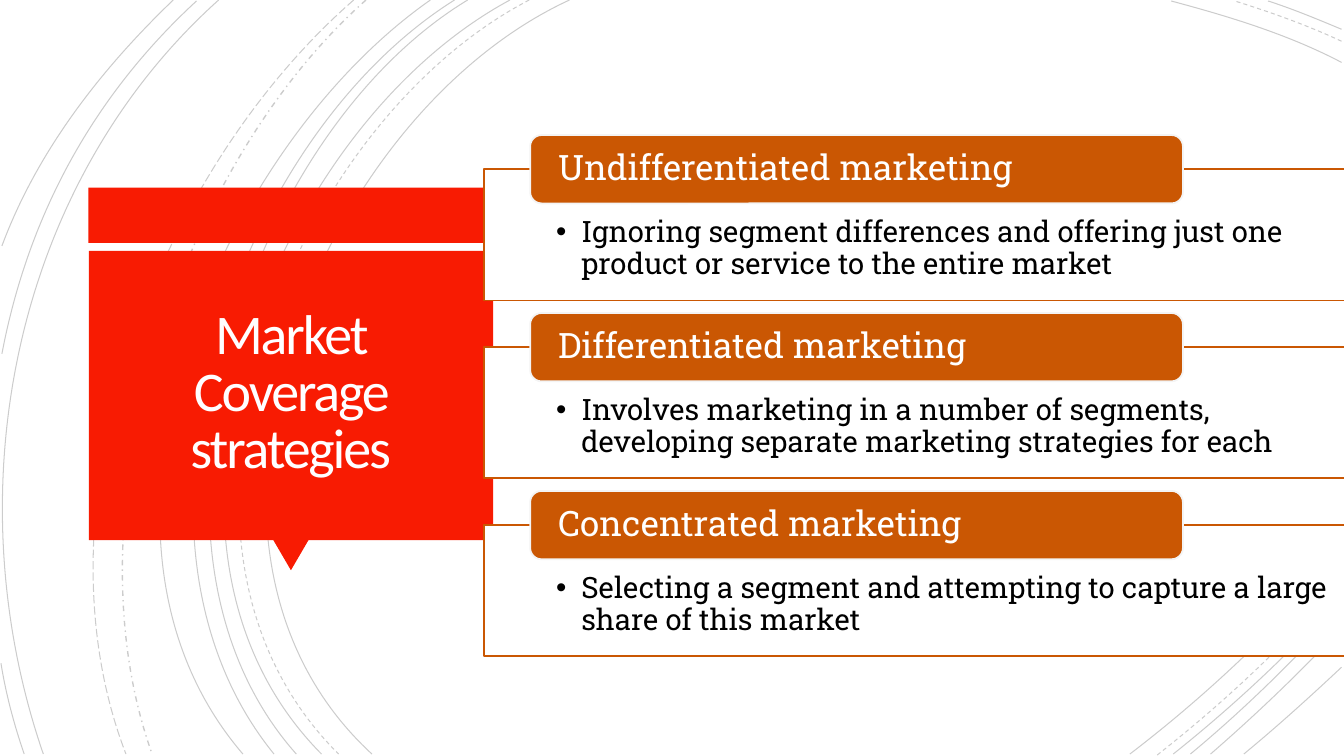
from dataclasses import dataclass
from typing import Any

from pptx import Presentation
from pptx.dml.color import RGBColor
from pptx.enum.dml import MSO_LINE
from pptx.enum.shapes import MSO_SHAPE
from pptx.enum.text import MSO_ANCHOR, MSO_AUTO_SIZE, PP_ALIGN
from pptx.oxml.ns import qn
from pptx.util import Pt

RED = "F81B02"
ORANGE = "CA5703"
FRAME_TOP = 120.9
PILL_TOP = 96.5
STRATEGY_PITCH = 127.1


@dataclass(frozen=True)
class Arc:
    points: tuple[float, ...]
    dash: Any = MSO_LINE.SOLID
    width: float = 0.75


@dataclass(frozen=True)
class Strategy:
    heading: str
    description: str


@dataclass(frozen=True)
class Block:
    preset: Any
    bounds: tuple[float, float, float, float]
    rotation: float = 0


@dataclass(frozen=True)
class TextStyle:
    font: str
    size: float
    color: str
    margins: tuple[float, float, float, float]
    anchor: Any
    align: Any
    spacing: float


ARCS = [
    Arc((406.8, 0, 226.8, 82.8, 103, 388.8, 265.7, 538.6)),
    Arc((958.3, 44.6, 920.2, 24.5, 877, 11.5, 836.6, 0.7)),
    Arc((807.1, 538.6, 861.8, 496.8, 913.7, 447.8, 958.3, 394.6)),
    Arc((378, 0, 205.2, 90, 88.6, 386.6, 241.9, 538.6), MSO_LINE.DASH),
    Arc((958.3, 29.5, 933.8, 18, 907.2, 8.6, 882, 0.7), MSO_LINE.DASH),
    Arc((826.6, 539.3, 873.4, 502.6, 918, 460.8, 957.6, 415.4), MSO_LINE.DASH),
    Arc((364.3, 0, 194.4, 91.4, 79.2, 386.6, 229.7, 538.6)),
    Arc((958.3, 20.9, 941, 13.7, 923.8, 6.5, 905.8, 0.7)),
    Arc((838.1, 538.6, 880.6, 504.7, 921.6, 466.6, 958.3, 425.5)),
    Arc((334.1, 0, 175.7, 95.8, 79.2, 389.5, 211.7, 538.6)),
    Arc((850.3, 538.6, 888.5, 506.9, 924.5, 471.6, 958.3, 434.2)),
    Arc((324.7, 0, 166.3, 99.4, 69.8, 383.8, 195.8, 538.6)),
    Arc((864.7, 538.6, 897.1, 510.5, 928.8, 480.2, 958.3, 448.6)),
    Arc((307.4, 0, 156.2, 105.8, 38.2, 380.9, 173.5, 538.6)),
    Arc((888.5, 538.6, 912.2, 519.1, 935.3, 498.2, 958.3, 476.6)),
    Arc((261.4, 0, 126.7, 119.5, 46.8, 366.5, 108.7, 538.6), MSO_LINE.DASH_DOT, 1),
    Arc((252.7, 0, 113, 121.7, 20.9, 359.3, 90, 538.6), MSO_LINE.LONG_DASH),
    Arc((156.2, 0, 7.9, 133.2, -33.1, 352.8, 31, 538.6)),
    Arc((140.4, 0.7, 66.2, 69.1, 20.2, 154.1, 1.4, 252.7)),
    Arc((0.7, 473.8, 4.3, 496.1, 10.1, 517.7, 17.3, 538.6)),
    Arc((123.8, 0, 72, 49.7, 26.6, 108, 1.4, 175.7)),
]
TITLE_BLOCKS = [
    Block(MSO_SHAPE.RECTANGLE, (63.2, 134, 289.4, 39.6)),
    Block(MSO_SHAPE.ISOSCELES_TRIANGLE, (195.2, 385.7, 25.2, 21.6), 180),
    Block(MSO_SHAPE.RECTANGLE, (63.5, 179.3, 288.7, 206.6)),
]
STRATEGIES = [
    Strategy("Undifferentiated marketing",
             "Ignoring segment differences and offering just one product or service "
             "to the entire market"),
    Strategy("Differentiated marketing",
             "Involves marketing in a number of segments, developing separate "
             "marketing strategies for each"),
    Strategy("Concentrated marketing",
             "Selecting a segment and attempting to capture a large share of this market"),
]
TITLE_STYLE = TextStyle("Calibri", 40, "FFFEFF", (18, 18, 18, 18),
                        MSO_ANCHOR.MIDDLE, PP_ALIGN.CENTER, 0.85)
HEADING_STYLE = TextStyle("Roboto Slab", 25, "FFFFFF", (17.6, 0, 17.6, 0),
                          MSO_ANCHOR.MIDDLE, PP_ALIGN.LEFT, 0.9)
LIST_STYLE = TextStyle("Roboto Slab", 21, "000000", (51.6, 34.3, 51.6, 11.5),
                       MSO_ANCHOR.TOP, PP_ALIGN.LEFT, 0.9)


def apply(target: Any, values: dict[str, Any]) -> None:
    for name, value in values.items():
        setattr(target, name, value)


def paint(fill: Any, color: str) -> None:
    fill.solid()
    fill.fore_color.rgb = RGBColor.from_string(color)


def outline(box: Any, color: str) -> None:
    paint(box.line.fill, color)
    box.line.width = Pt(1.25)


def place(box: Any, bounds: tuple[float, float, float, float]) -> None:
    apply(box, dict(zip(("left", "top", "width", "height"), map(Pt, bounds))))


def bring_to_front(box: Any) -> None:
    box.element.getparent().append(box.element)


def write(box: Any, text: str, style: TextStyle) -> Any:
    frame = box.text_frame
    frame.text = text
    left, top, right, bottom = map(Pt, style.margins)
    apply(frame, {"margin_left": left, "margin_top": top, "margin_right": right,
                  "margin_bottom": bottom, "vertical_anchor": style.anchor,
                  "word_wrap": True, "auto_size": MSO_AUTO_SIZE.NONE})
    para = frame.paragraphs[0]
    apply(para, {"alignment": style.align, "line_spacing": style.spacing,
                 "space_before": Pt(0), "space_after": Pt(0)})
    span = para.runs[0]
    apply(span.font, {"name": style.font, "size": Pt(style.size), "bold": False})
    paint(span.font.fill, style.color)
    return para


def draw_arc(page: Any, arc: Arc) -> None:
    start, *controls = [(Pt(x), Pt(y)) for x, y in zip(arc.points[::2], arc.points[1::2])]
    builder = page.shapes.build_freeform(*start)
    builder.add_line_segments(controls, close=False)
    curve = builder.convert_to_shape()
    segments = curve.element.xpath(".//a:lnTo")
    bezier = segments[0].makeelement(qn("a:cubicBezTo"))
    segments[0].addprevious(bezier)
    for segment in segments:
        bezier.append(segment[0])
        segment.getparent().remove(segment)
    curve.shadow.inherit = False
    curve.fill.background()
    paint(curve.line.fill, "000000")
    apply(curve.line, {"width": Pt(arc.width), "dash_style": arc.dash})
    color = curve.element.xpath("./p:spPr/a:ln//a:srgbClr")[0]
    color.append(color.makeelement(qn("a:alpha"), {"val": "20000"}))


def draw_block(page: Any, block: Block) -> None:
    box = page.shapes.add_shape(block.preset, *map(Pt, block.bounds))
    box.shadow.inherit = False
    box.rotation = block.rotation
    paint(box.fill, RED)
    box.line.fill.background()


def draw_strategy(page: Any, body: Any, strategy: Strategy, offset: float) -> None:
    place(body, (345.6, FRAME_TOP + offset, 666, 93.7))
    bring_to_front(body)
    paint(body.fill, "FFFFFF")
    outline(body, ORANGE)
    para = write(body, strategy.description, LIST_STYLE)
    settings = para._p.get_or_add_pPr()
    settings.set("marL", str(Pt(18)))
    settings.set("indent", str(Pt(-18)))
    settings.append(settings.makeelement(qn("a:buChar"), {"char": "•"}))

    pill = page.shapes.add_shape(MSO_SHAPE.ROUNDED_RECTANGLE, Pt(378.7),
                                 Pt(PILL_TOP + offset), Pt(466.3), Pt(48.8))
    pill.shadow.inherit = False
    paint(pill.fill, ORANGE)
    outline(pill, "F4F4F4")
    write(pill, strategy.heading, HEADING_STYLE)


def main() -> None:
    deck = Presentation()
    apply(deck, {"slide_width": Pt(960), "slide_height": Pt(540)})
    page = deck.slides.add_slide(deck.slide_layouts.get_by_name("Comparison"))
    title, *bodies, spare = page.placeholders
    spare.element.getparent().remove(spare.element)
    for arc in ARCS:
        draw_arc(page, arc)
    for block in TITLE_BLOCKS:
        draw_block(page, block)
    place(title, (69.8, 185, 275.8, 193.7))
    bring_to_front(title)
    para = write(title, "Market Coverage strategies", TITLE_STYLE)
    para.runs[0]._r.get_or_add_rPr().set("spc", "-150")
    for index, (body, strategy) in enumerate(zip(bodies, STRATEGIES)):
        draw_strategy(page, body, strategy, index * STRATEGY_PITCH)
    deck.save("out.pptx")


if __name__ == "__main__":
    main()
